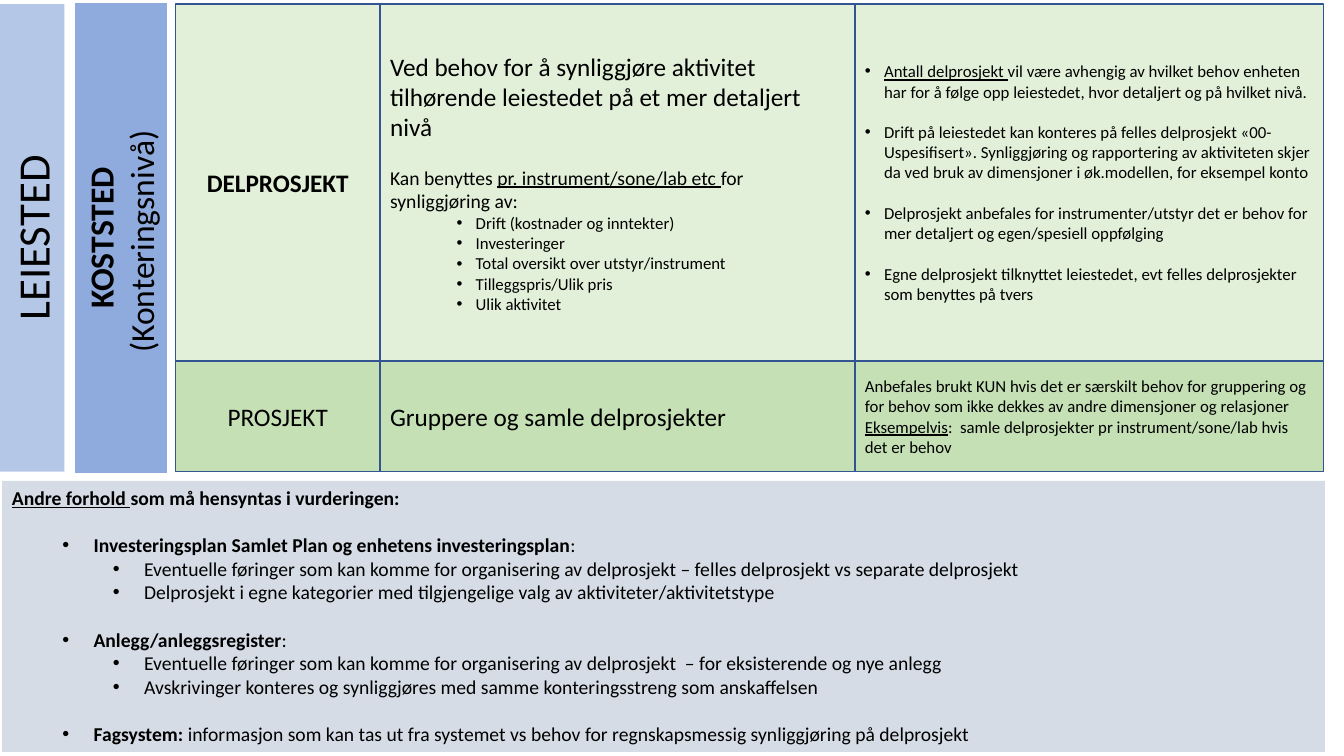
from lxml.etree import SubElement
from pptx import Presentation
from pptx.dml.color import RGBColor
from pptx.enum.shapes import MSO_SHAPE
from pptx.enum.text import MSO_ANCHOR, PP_ALIGN
from pptx.oxml.ns import qn
from pptx.util import Inches, Pt

FONT = "Calibri"
INK, EDGE = "000000", "325491"
PALE, GREEN, GREY = "E2F0D9", "C5E0B4", "D6DCE5"
LIGHT, BLUE = "B4C7E7", "8FAADC"


def color(code):
    return RGBColor.from_string(code)


def box(slide, left, top, width, height, fill, edge=None):
    shape = slide.shapes.add_shape(
        MSO_SHAPE.RECTANGLE,
        Inches(left), Inches(top), Inches(width), Inches(height))
    shape.shadow.inherit = False
    shape.fill.solid()
    shape.fill.fore_color.rgb = color(fill)
    if edge:
        shape.line.color.rgb = color(edge)
        shape.line.width = Pt(1)
    else:
        shape.line.fill.background()
    shape.text_frame.word_wrap = True
    return shape


def para(runs, size, level=0, left=0, hang=0, gap=0, align=PP_ALIGN.LEFT):
    """Describe a paragraph; each run is (text, style), style from b and u."""
    return dict(runs=runs, size=size, level=level, left=left, hang=hang,
                gap=gap, align=align)


def bullet(item, left, hang):
    props = item._p.get_or_add_pPr()
    props.set("marL", str(Inches(left)))
    props.set("indent", str(-Inches(hang)))
    SubElement(props, qn("a:buFont"), typeface="Arial")
    SubElement(props, qn("a:buChar"), char="•")


def write(shape, paras, anchor=MSO_ANCHOR.MIDDLE):
    frame = shape.text_frame
    frame.vertical_anchor = anchor
    for index, data in enumerate(paras):
        item = frame.add_paragraph() if index else frame.paragraphs[0]
        item.alignment = data["align"]
        item.level = data["level"]
        item.space_before = Pt(data["gap"])
        if data["hang"]:
            bullet(item, data["left"], data["hang"])
        for text, style in data["runs"]:
            run = item.add_run()
            run.text = text
            font = run.font
            font.name, font.size = FONT, Pt(data["size"])
            font.color.rgb = color(INK)
            font.bold = "b" in style
            font.underline = "u" in style


def label(text, size, style=""):
    return para([(text, style)], size, align=PP_ALIGN.CENTER)


def grid(slide, rows):
    """Lay out the rows of cells; each row is (top, height, fill, cells)."""
    for top, height, fill, cells in rows:
        left = 1.74
        for width, paras in zip((2.03, 4.71, 4.65), cells):
            write(box(slide, left, top, width, height, fill, EDGE), paras)
            left += width


def band(slide, mid, length, thick, fill, paras):
    """Draw a bar that reads upwards, centred on x = mid."""
    shape = box(slide, mid - length / 2, 2.36 - thick / 2, length, thick, fill)
    shape.rotation = 270
    write(shape, paras, MSO_ANCHOR.TOP)


def need():
    uses = ("Drift (kostnader og inntekter)", "Investeringer",
            "Total oversikt over utstyr/instrument",
            "Tilleggspris/Ulik pris", "Ulik aktivitet")
    return [
        para([("Ved behov for å synliggjøre aktivitet tilhørende leiestedet "
               "på et mer detaljert nivå", "")], 18),
        para([("Kan benyttes ", ""), ("pr. instrument/sone/lab etc ", "u"),
              ("for synliggjøring av:", "")], 14, gap=17),
    ] + [para([(use, "")], 12, 1, 0.85, 0.19) for use in uses]


def advice():
    points = (
        [("Antall delprosjekt ", "u"),
         ("vil være avhengig av hvilket behov enheten har for å følge opp "
          "leiestedet, hvor detaljert og på hvilket nivå.", "")],
        [("Drift på leiestedet kan konteres på felles delprosjekt "
          "«00-Uspesifisert». Synliggjøring og rapportering av aktiviteten "
          "skjer da ved bruk av dimensjoner i øk.modellen, for eksempel "
          "konto", "")],
        [("Delprosjekt anbefales for instrumenter/utstyr det er behov for "
          "mer detaljert og egen/spesiell oppfølging", "")],
        [("Egne delprosjekt tilknyttet leiestedet, evt felles delprosjekter "
          "som benyttes på tvers", "")],
    )
    return [para(runs, 12, 0, 0.19, 0.19, 14.6 if index else 0)
            for index, runs in enumerate(points)]


def group():
    return [
        para([("Anbefales brukt KUN hvis det er særskilt behov for gruppering "
               "og for behov som ikke dekkes av andre dimensjoner og "
               "relasjoner", "")], 12),
        para([("Eksempelvis", "u"),
              (":  samle delprosjekter pr instrument/sone/lab hvis det er "
               "behov", "")], 12),
    ]


def other():
    topics = (
        ("Investeringsplan Samlet Plan og enhetens investeringsplan", ":", (
            "Eventuelle føringer som kan komme for organisering av "
            "delprosjekt – felles delprosjekt vs separate delprosjekt",
            "Delprosjekt i egne kategorier med tilgjengelige valg av "
            "aktiviteter/aktivitetstype")),
        ("Anlegg/anleggsregister", ":", (
            "Eventuelle føringer som kan komme for organisering av "
            "delprosjekt  – for eksisterende og nye anlegg",
            "Avskrivinger konteres og synliggjøres med samme "
            "konteringsstreng som anskaffelsen")),
        ("Fagsystem: ", "informasjon som kan tas ut fra systemet vs behov "
         "for regnskapsmessig synliggjøring på delprosjekt", ()),
    )
    paras = [para([("Andre forhold ", "bu"),
                   ("som må hensyntas i vurderingen:", "b")], 14)]
    for head, tail, subs in topics:
        paras.append(para([(head, "b"), (tail, "")], 14, 1, 0.81, 0.31, 17))
        paras += [para([(sub, "")], 14, 2, 1.31, 0.31) for sub in subs]
    return paras


def main():
    deck = Presentation()
    deck.slide_width, deck.slide_height = Inches(13.33), Inches(7.5)
    slide = deck.slides.add_slide(deck.slide_layouts[6])

    # Cells for subproject and project
    grid(slide, (
        (0.04, 3.54, PALE,
         ([label("DELPROSJEKT", 18, "b")], need(), advice())),
        (3.58, 1.1, GREEN,
         ([label("PROSJEKT", 18)],
          [para([("Gruppere og samle delprosjekter", "")], 18)], group())),
    ))

    # Panel with other matters
    write(box(slide, 0.02, 4.77, 13.12, 2.69, GREY), other(), MSO_ANCHOR.TOP)

    # Upright bars on the left
    band(slide, 0.32, 4.64, 0.64, LIGHT, [label("LEIESTED", 32)])
    band(slide, 1.2, 4.66, 0.91, BLUE,
         [label("KOSTSTED", 24, "b"), label("(Konteringsnivå) ", 24)])

    deck.save("out.pptx")


if __name__ == "__main__":
    main()
